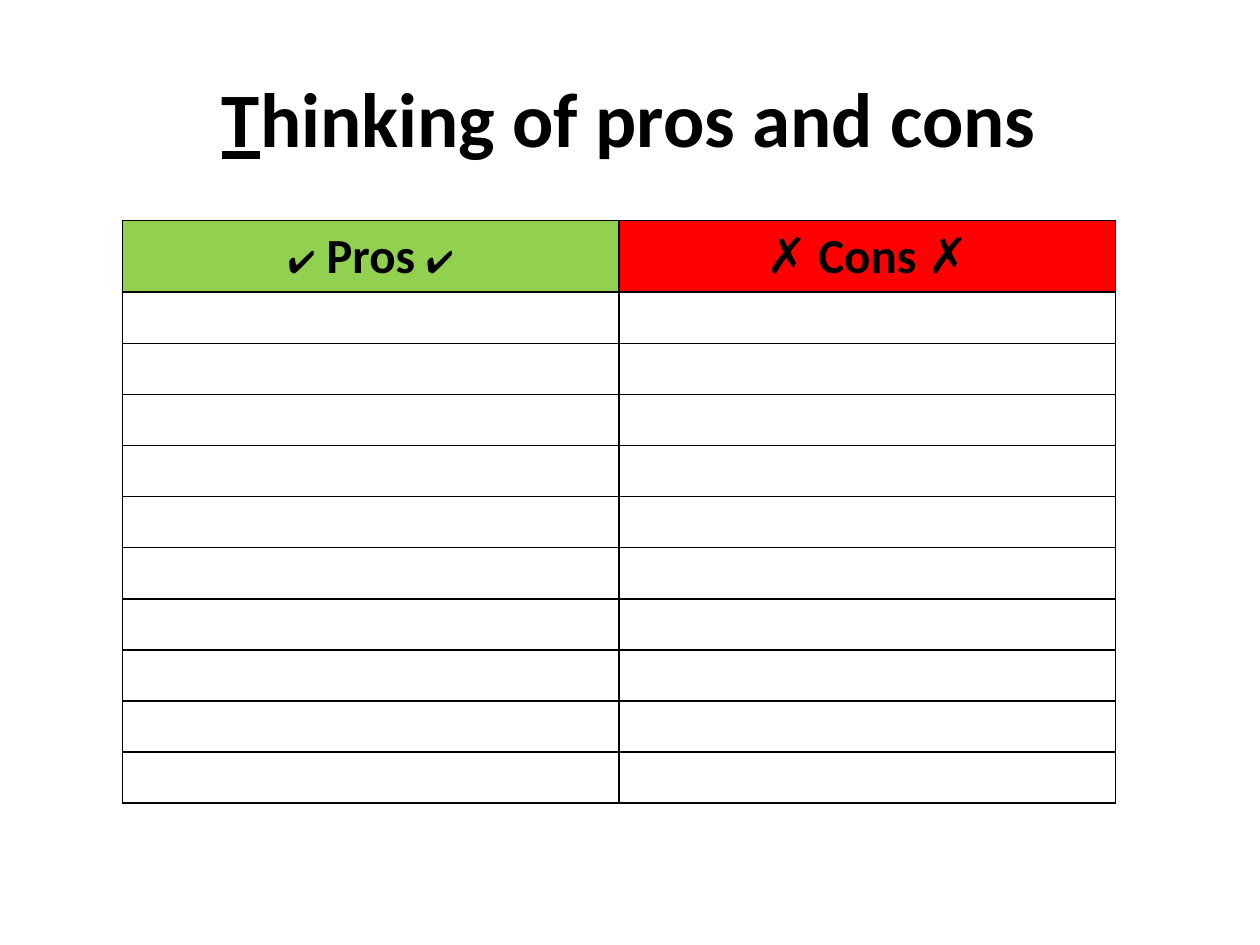
"""Build a slide with a title and an empty table of pros and cons."""
from lxml import etree
from pptx import Presentation
from pptx.dml.color import RGBColor
from pptx.enum.text import MSO_ANCHOR, PP_ALIGN
from pptx.oxml.ns import qn
from pptx.util import Pt

CENTER, MIDDLE = PP_ALIGN.CENTER, MSO_ANCHOR.MIDDLE
COLORS = {"ink": "000000", "pros": "92D050", "cons": "FF0000"}
FORMATS = {
    "key": {"size": Pt(44), "bold": True, "underline": True},
    "title": {"size": Pt(44), "bold": True},
    "mark": {"size": Pt(18), "bold": False},
    "head": {"size": Pt(28), "bold": True},
}
TITLE = [("T", "key"), ("hinking of pros and cons", "title")]
HEADS = [
    ("pros", [("✔", "mark"), (" Pros ", "head"), ("✔", "mark")]),
    ("cons", [("✗ Cons ✗", "head")]),
]
BLANKS = 10
LEFT, TOP, WIDTH = 70, 126, 283.75
HEAD_H, ROW_H = 41, 29.2
SIDES = ("a:lnL", "a:lnR", "a:lnT", "a:lnB")


def write(frame, runs):
    """Fill a text frame with one centred line of styled runs."""
    para = frame.paragraphs[0]
    para.alignment = CENTER
    for text, style in runs:
        run = para.add_run()
        run.text = text
        run.font.name = "Calibri"
        run.font.color.rgb = RGBColor.from_string(COLORS["ink"])
        for name, value in FORMATS[style].items():
            setattr(run.font, name, value)


def border(cell):
    """Draw a thin line on all four sides of a cell."""
    props = cell._tc.get_or_add_tcPr()
    for spot, side in enumerate(SIDES):
        line = etree.Element(qn(side), w=str(Pt(1)))
        fill = etree.SubElement(line, qn("a:solidFill"))
        etree.SubElement(fill, qn("a:srgbClr"), val=COLORS["ink"])
        props.insert(spot, line)


def main():
    """Make the slide and save it."""
    deck = Presentation()
    deck.slide_width, deck.slide_height = Pt(720), Pt(540)
    slide = deck.slides.add_slide(deck.slide_layouts[6])

    title = slide.shapes.add_textbox(Pt(36), Pt(21.6), Pt(647.5), Pt(90))
    title.text_frame.word_wrap = True
    title.text_frame.vertical_anchor = MIDDLE
    write(title.text_frame, TITLE)

    high = HEAD_H + BLANKS * ROW_H
    table = slide.shapes.add_table(
        BLANKS + 1, len(HEADS), Pt(LEFT), Pt(TOP),
        Pt(WIDTH * len(HEADS)), Pt(high)).table
    table.first_row = table.horz_banding = False
    for col in table.columns:
        col.width = Pt(WIDTH)
    for num, row in enumerate(table.rows):
        row.height = Pt(ROW_H if num else HEAD_H)
    for cell in table.iter_cells():
        cell.fill.background()
        border(cell)
    for num, (color, runs) in enumerate(HEADS):
        cell = table.cell(0, num)
        cell.fill.solid()
        cell.fill.fore_color.rgb = RGBColor.from_string(COLORS[color])
        write(cell.text_frame, runs)
    deck.save("out.pptx")


if __name__ == "__main__":
    main()
